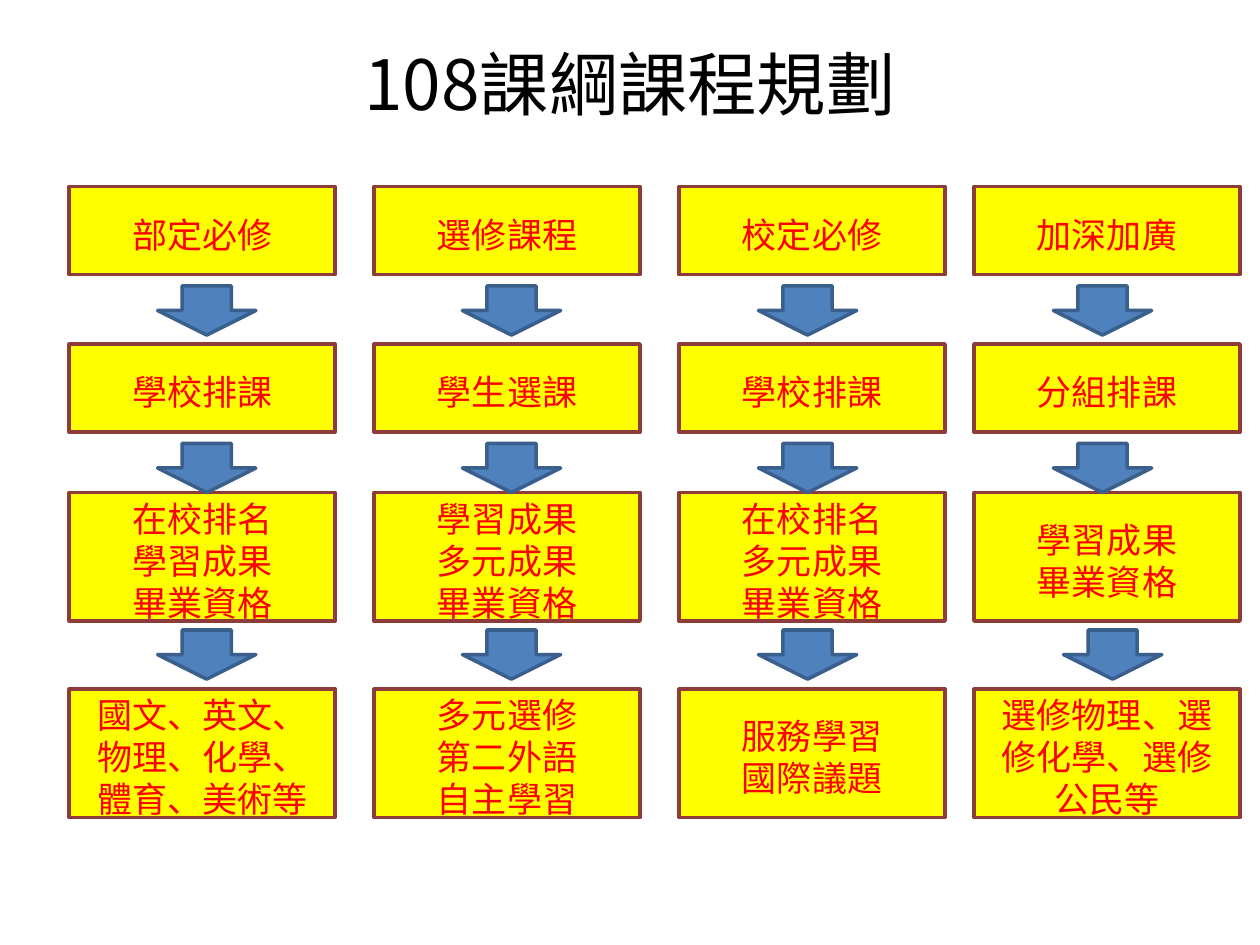
from lxml.etree import SubElement
from pptx import Presentation
from pptx.dml.color import RGBColor
from pptx.enum.shapes import MSO_SHAPE as Shape
from pptx.enum.text import MSO_ANCHOR as Anchor, PP_ALIGN as Align
from pptx.oxml.ns import qn
from pptx.util import Pt

FONT = "Noto Sans CJK SC"
COLUMN_LEFTS = [39.6, 213.8, 388.1, 556.6]
BOX_WIDTH = 152
ARROW_LEFTS = [90, 264.2, 433.4, 601.9]
LAST_ARROW_LEFTS = ARROW_LEFTS[:3] + [607.7]
ARROW_ROWS = [(163.4, ARROW_LEFTS), (253.4, ARROW_LEFTS), (360, LAST_ARROW_LEFTS)]
STAGES = [
    (106.6, 50.4, ["部定必修", "選修課程", "校定必修", "加深加廣"]),
    (196.6, 50.4, ["學校排課", "學生選課", "學校排課", "分組排課"]),
    (281.5, 73.4, [
        "在校排名\n學習成果\n畢業資格",
        "學習成果\n多元成果\n畢業資格",
        "在校排名\n多元成果\n畢業資格",
        "學習成果\n畢業資格",
    ]),
    (393.8, 73.4, [
        "國文、英文、物理、化學、體育、美術等",
        "多元選修\n第二外語\n自主學習",
        "服務學習\n國際議題",
        "選修物理、選修化學、選修公民等",
    ]),
]


def color(value):
    return RGBColor.from_string(value)


def write(frame, text, size, ink, spacing=None):
    frame.word_wrap = True
    frame.vertical_anchor = Anchor.MIDDLE
    frame.text = text
    for paragraph in frame.paragraphs:
        paragraph.alignment = Align.CENTER
        if spacing:
            paragraph.line_spacing = Pt(spacing)
        for run in paragraph.runs:
            run.font.size = Pt(size)
            run.font.name = FONT
            run.font.color.rgb = color(ink)
            SubElement(run.font._element, qn("a:ea"), typeface=FONT)


def add_title(slide, text):
    title = slide.shapes.add_textbox(Pt(36), Pt(21.6), Pt(648), Pt(51.8))
    title.text_frame.margin_top = title.text_frame.margin_bottom = 0
    write(title.text_frame, text, 39.6, "000000")


def add_block(slide, preset, left, top, width, height, fill, outline):
    block = slide.shapes.add_shape(preset, Pt(left), Pt(top), Pt(width), Pt(height))
    block.shadow.inherit = False
    block.fill.solid()
    block.fill.fore_color.rgb = color(fill)
    block.line.color.rgb = color(outline)
    block.line.width = Pt(2)
    return block


def add_course_box(slide, left, top, height, text):
    box = add_block(slide, Shape.RECTANGLE, left, top, BOX_WIDTH, height, "FFFF00", "8E3B39")
    box.text_frame.margin_top = Pt(4)
    box.text_frame.margin_bottom = 0
    write(box.text_frame, text, 20, "FF0000", spacing=24)


def add_down_arrow(slide, left, top):
    add_block(slide, Shape.DOWN_ARROW, left, top, 56.2, 28.1, "4F81BD", "3A5F8C")


def main():
    deck = Presentation()
    deck.slide_width, deck.slide_height = Pt(720), Pt(540)
    slide = deck.slides.add_slide(deck.slide_layouts[6])
    add_title(slide, "108課綱課程規劃")
    for top, height, courses in STAGES:
        for left, course in zip(COLUMN_LEFTS, courses):
            add_course_box(slide, left, top, height, course)
    for top, lefts in ARROW_ROWS:
        for left in lefts:
            add_down_arrow(slide, left, top)
    deck.save("out.pptx")


if __name__ == "__main__":
    main()
